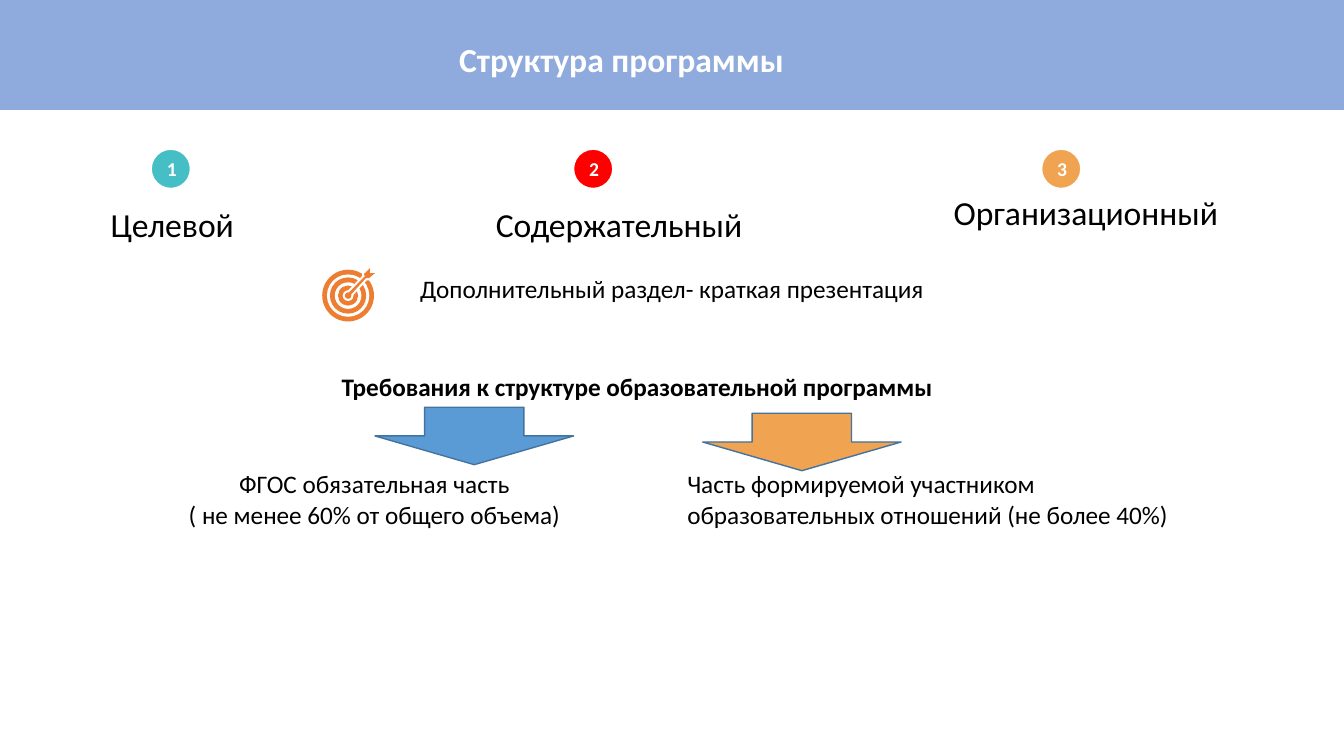
from pptx import Presentation
from pptx import util as u
from pptx.dml import color
from pptx.enum import shapes, text

COLOURS = {
    "band": "8FAADC", "white": "FFFFFF", "black": "000000", "teal": "45BEC6",
    "red": "FF0000", "amber": "F0A351", "target": "ED7D31", "blue": "5B9BD5",
    "edge": "43739E",
}
COLUMNS, ROWS = 40, 30
ROUND = 4 / 3


class Board:
    font = "Calibri"

    def __init__(self, deck):
        self.column = deck.slide_width / COLUMNS
        self.row = deck.slide_height / ROWS
        self.page = deck.slides.add_slide(deck.slide_layouts[1])

    def colour(self, name):
        return color.RGBColor.from_string(COLOURS[name])

    def frame(self, left, top, width, height):
        return (round(left * self.column), round(top * self.row),
                round(width * self.column), round(height * self.row))

    def set_words(self, box, words, size, ink="black", bold=False, align=None):
        box.text_frame.text = words
        for para in box.text_frame.paragraphs:
            para.alignment = align
            for span in para.runs:
                span.font.name = self.font
                span.font.size = u.Pt(size)
                span.font.bold = bold
                span.font.color.rgb = self.colour(ink)

    def paint(self, shape, fill, edge=None, weight=1):
        shape.shadow.inherit = False
        shape.fill.solid()
        shape.fill.fore_color.rgb = self.colour(fill)
        if edge:
            shape.line.color.rgb = self.colour(edge)
            shape.line.width = u.Pt(weight)
        else:
            shape.line.fill.background()
        return shape

    def shape(self, kind, place, fill, edge=None):
        drawn = self.page.shapes.add_shape(kind, *self.frame(*place))
        return self.paint(drawn, fill, edge)

    def outline(self, points, fill, edge=None, weight=1):
        spots = [(x * self.column, y * self.row) for x, y in points]
        builder = self.page.shapes.build_freeform(*spots[0])
        builder.add_line_segments(spots[1:], close=True)
        return self.paint(builder.convert_to_shape(), fill, edge, weight)

    def disc(self, x, y, size, fill):
        place = (x - size / 2, y - size * ROUND / 2, size, size * ROUND)
        self.shape(shapes.MSO_SHAPE.OVAL, place, fill)

    def label(self, place, words, size, wrap=False, **style):
        box = self.page.shapes.add_textbox(*self.frame(*place))
        box.text_frame.word_wrap = wrap
        self.set_words(box, words, size, **style)

    def placeholder(self, box, place, words, size, anchor, **style):
        box.left, box.top, box.width, box.height = self.frame(*place)
        self.set_words(box, words, size, **style)
        box.text_frame.auto_size = text.MSO_AUTO_SIZE.NONE
        box.text_frame.vertical_anchor = anchor
        box.text_frame.paragraphs[0].line_spacing = 0.9
        return box

    def title(self, place, words):
        box = self.placeholder(
            self.page.shapes.title, place, words, 24, text.MSO_ANCHOR.MIDDLE,
            ink="white", bold=True, align=text.PP_ALIGN.CENTER)
        band = self.shape(shapes.MSO_SHAPE.RECTANGLE, (0, 0, COLUMNS, 4.36), "band")
        box._element.addprevious(band._element)

    def body(self, place, words):
        box = self.placeholder(
            self.page.placeholders[1], place, words, 24, text.MSO_ANCHOR.TOP,
            align=text.PP_ALIGN.LEFT)
        para = box.text_frame.paragraphs[0]
        para.space_before = u.Pt(10)
        settings = para._p.get_or_add_pPr()
        settings.set("marL", "0")
        settings.set("indent", "0")
        settings.append(settings.makeelement(
            "{http://schemas.openxmlformats.org/drawingml/2006/main}buNone", {}))

    def badge(self, left, number, fill):
        size = 1.17
        place = (left, 5.92, size, size * ROUND)
        circle = self.shape(shapes.MSO_SHAPE.OVAL, place, fill, "white")
        circle.text_frame.vertical_anchor = text.MSO_ANCHOR.MIDDLE
        self.set_words(circle, str(number), 14, "white", True, text.PP_ALIGN.CENTER)

    def target(self, x, y):
        for index, size in enumerate((1.54, 1.26, 1.08, 0.79, 0.6, 0.32)):
            self.disc(x, y, size, "white" if index % 2 else "target")
        dart = [(x + across, y + down) for across, down in (
            (-0.04, -0.03), (0.5, -0.77), (0.47, -0.85), (0.65, -1.09),
            (0.65, -0.89), (0.8, -0.89), (0.62, -0.69), (0.53, -0.69),
            (0.04, 0.03))]
        self.outline(dart, "white", "white", 3)
        self.outline(dart, "target")
        self.disc(x, y, 0.19, "target")

    def arrow(self, left, top, fill):
        self.shape(shapes.MSO_SHAPE.DOWN_ARROW, (left, top, 5.91, 2.28), fill, "edge")


def main():
    deck = Presentation()
    deck.slide_width, deck.slide_height = u.Inches(13.33), u.Inches(7.5)
    board = Board(deck)
    board.title((5.1, -0.44, 26.8, 5.8), "Структура программы")
    board.body((28.08, 7.6, 9.06, 4.92), "Организационный")
    board.target(10.36, 11.73)
    board.label((3, 7.88, 4.53, 2), "Целевой", 24)
    board.label((14.46, 7.88, 20, 2), "Содержательный", 24, wrap=True)
    board.label((12.21, 10.64, 15.93, 1.6),
                "Дополнительный раздел- краткая презентация", 18)
    badges = ((4.5, "teal"), (17.07, "red"), (31, "amber"))
    for number, (left, fill) in enumerate(badges, 1):
        board.badge(left, number, fill)
    board.label((9.87, 14.52, 18.36, 1.6),
                "Требования к структуре образовательной программы", 18, bold=True)
    board.label((5.25, 18.4, 11.79, 2.84),
                "ФГОС обязательная часть\n( не менее 60% от общего объема)",
                18, align=text.PP_ALIGN.CENTER)
    board.label((20.16, 18.4, 16.62, 2.84),
                "Часть формируемой участником образовательных отношений (не более 40%)",
                18, wrap=True)
    board.arrow(11.16, 16.16, "blue")
    board.arrow(20.91, 16.4, "amber")
    deck.save("out.pptx")


if __name__ == "__main__":
    main()
